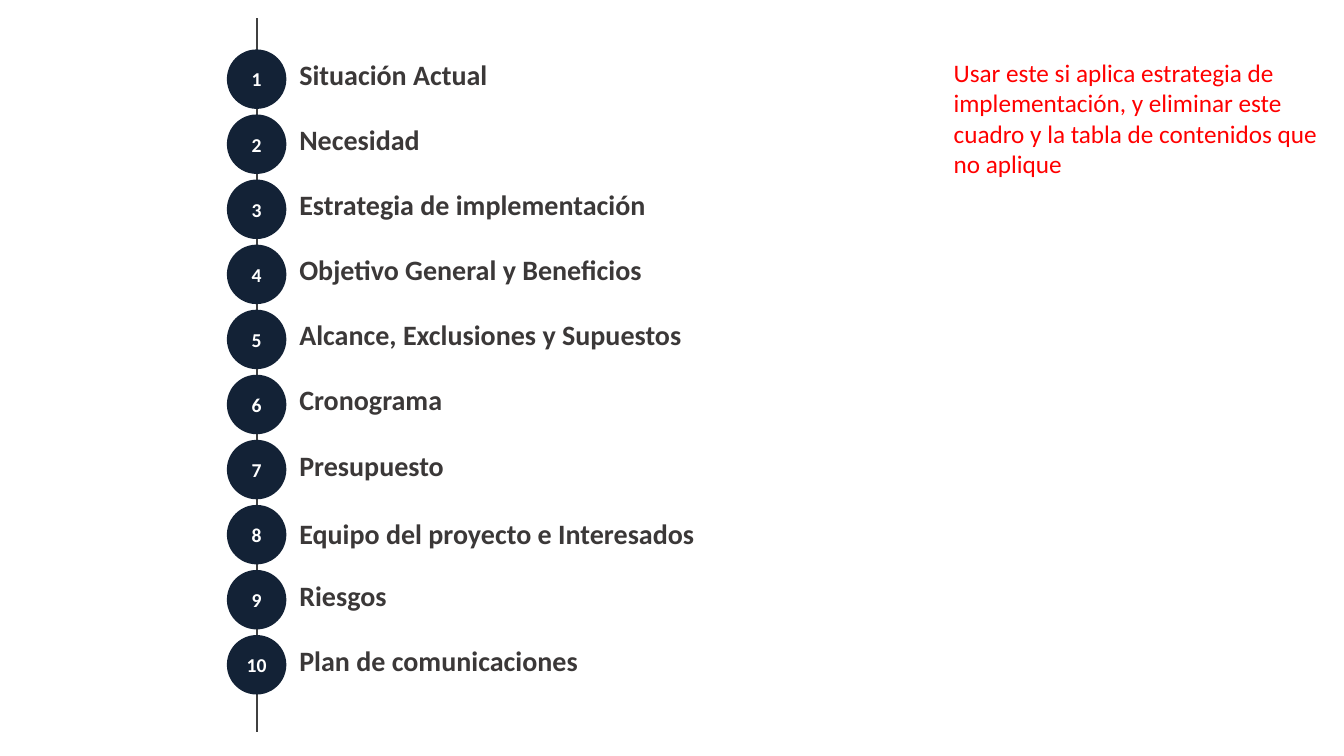
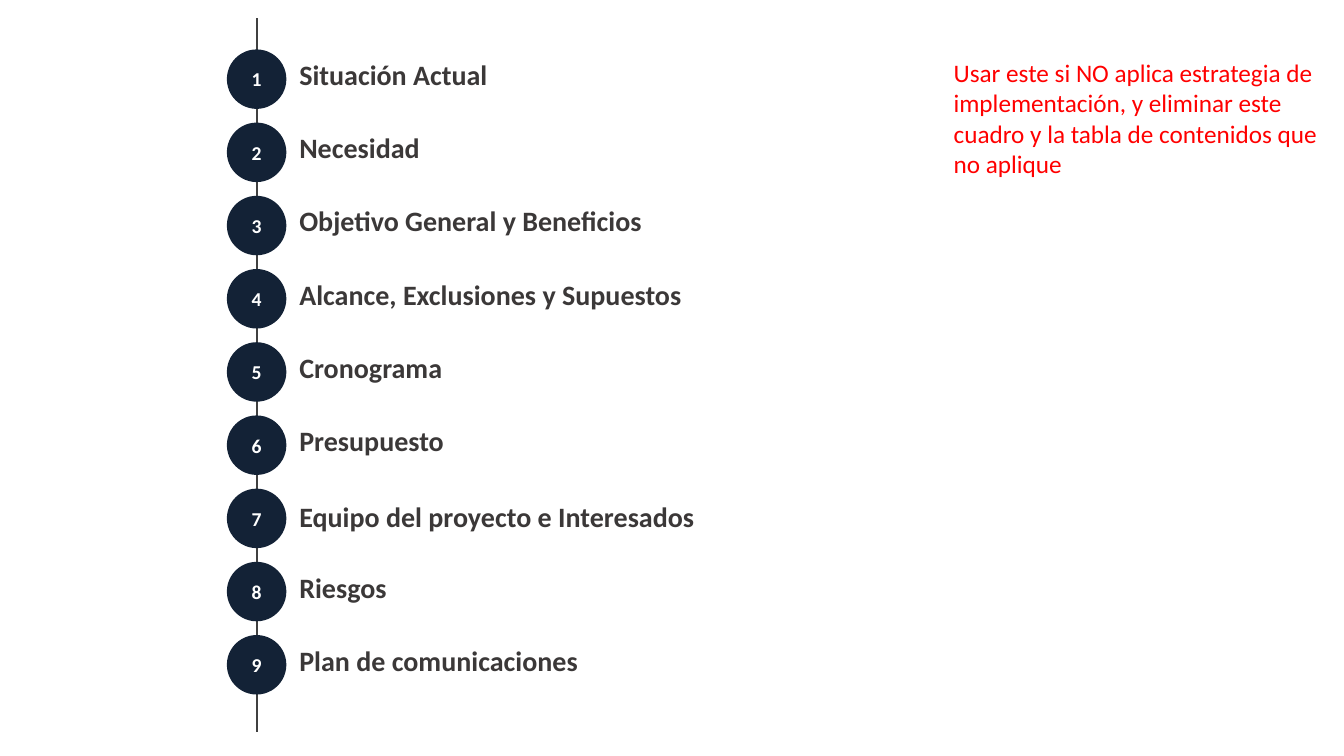
from lxml import etree
from pptx import Presentation
from pptx.dml.color import RGBColor
from pptx.enum.shapes import MSO_CONNECTOR, MSO_SHAPE
from pptx.enum.text import MSO_ANCHOR, MSO_AUTO_SIZE, PP_ALIGN
from pptx.oxml.ns import qn
from pptx.util import Inches, Pt

STRATEGY = "Estrategia de implementación"
TEAM = "Equipo del proyecto e Interesados"
TOPICS = [
    "Situación Actual",
    "Necesidad",
    STRATEGY,
    "Objetivo General y Beneficios",
    "Alcance, Exclusiones y Supuestos",
    "Cronograma",
    "Presupuesto",
    TEAM,
    "Riesgos",
    "Plan de comunicaciones",
]
NOTE = ("Usar este si {} estrategia de implementación, y eliminar este "
        "cuadro y la tabla de contenidos que no aplique")
AGENDAS = [
    (TOPICS, NOTE.format("aplica")),
    ([topic for topic in TOPICS if topic != STRATEGY], NOTE.format("NO aplica")),
]

FONT = "Calibri"
NAVY, DARK_GRAY, LINE_GRAY = "132236", "3B3838", "404040"
WHITE, RED = "FFFFFF", "FF0000"

LINE_X, LINE_TOP, LINE_BOTTOM = 2.55, 0.18, 7.26
CIRCLE_LEFT, CIRCLE_SIZE = 2.25, 0.59
FIRST_TOP, LAST_TOP = 0.49, 6.3
LABEL_LEFT, LABEL_WIDTH, LABEL_HEIGHT = 2.87, 8.99, 0.43
LABEL_DROP = 0.07
TEAM_DROP = 0.1


def color(hex_string):
    return RGBColor.from_string(hex_string)


def write(shape, text, size, hex_string, bold=False):
    """Put one paragraph of text in the shape and return the paragraph."""
    shape.text_frame.word_wrap = True
    paragraph = shape.text_frame.paragraphs[0]
    paragraph.text = text
    font = paragraph.font
    font.name, font.size, font.bold = FONT, Pt(size), bold
    font.color.rgb = color(hex_string)
    return paragraph


def add_timeline(slide):
    line = slide.shapes.add_connector(
        MSO_CONNECTOR.STRAIGHT, Inches(LINE_X), Inches(LINE_TOP),
        Inches(LINE_X), Inches(LINE_BOTTOM))
    line.line.color.rgb = color(LINE_GRAY)
    line.line.width = Pt(1)
    etree.SubElement(line._element.spPr, qn("a:effectLst"))


def add_topic(slide, number, topic, top):
    """Add a numbered circle and its label as one group."""
    group = slide.shapes.add_group_shape()
    drop = TEAM_DROP if topic == TEAM else LABEL_DROP
    label = group.shapes.add_textbox(
        Inches(LABEL_LEFT), Inches(top + drop),
        Inches(LABEL_WIDTH), Inches(LABEL_HEIGHT))
    write(label, topic, 20, DARK_GRAY, bold=True).line_spacing = 0.9

    circle = group.shapes.add_shape(
        MSO_SHAPE.OVAL, Inches(CIRCLE_LEFT), Inches(top),
        Inches(CIRCLE_SIZE), Inches(CIRCLE_SIZE))
    circle.shadow.inherit = False
    circle.fill.solid()
    circle.fill.fore_color.rgb = color(NAVY)
    circle.line.fill.background()
    circle.text_frame.vertical_anchor = MSO_ANCHOR.MIDDLE
    write(circle, str(number), 14, WHITE, bold=True).alignment = PP_ALIGN.CENTER


def add_note(slide, text):
    note = slide.shapes.add_textbox(
        Inches(9.36), Inches(0.52), Inches(3.82), Inches(1.31))
    write(note, text, 18, RED)
    note.text_frame.auto_size = MSO_AUTO_SIZE.SHAPE_TO_FIT_TEXT


def add_agenda(presentation, topics, note):
    slide = presentation.slides.add_slide(presentation.slide_layouts[6])
    add_timeline(slide)
    step = (LAST_TOP - FIRST_TOP) / (len(topics) - 1)
    for index, topic in enumerate(topics):
        add_topic(slide, index + 1, topic, FIRST_TOP + index * step)
    add_note(slide, note)


def main():
    presentation = Presentation()
    presentation.slide_width = Inches(13.33)
    presentation.slide_height = Inches(7.5)
    for topics, note in AGENDAS:
        add_agenda(presentation, topics, note)
    presentation.save("out.pptx")


if __name__ == "__main__":
    main()
